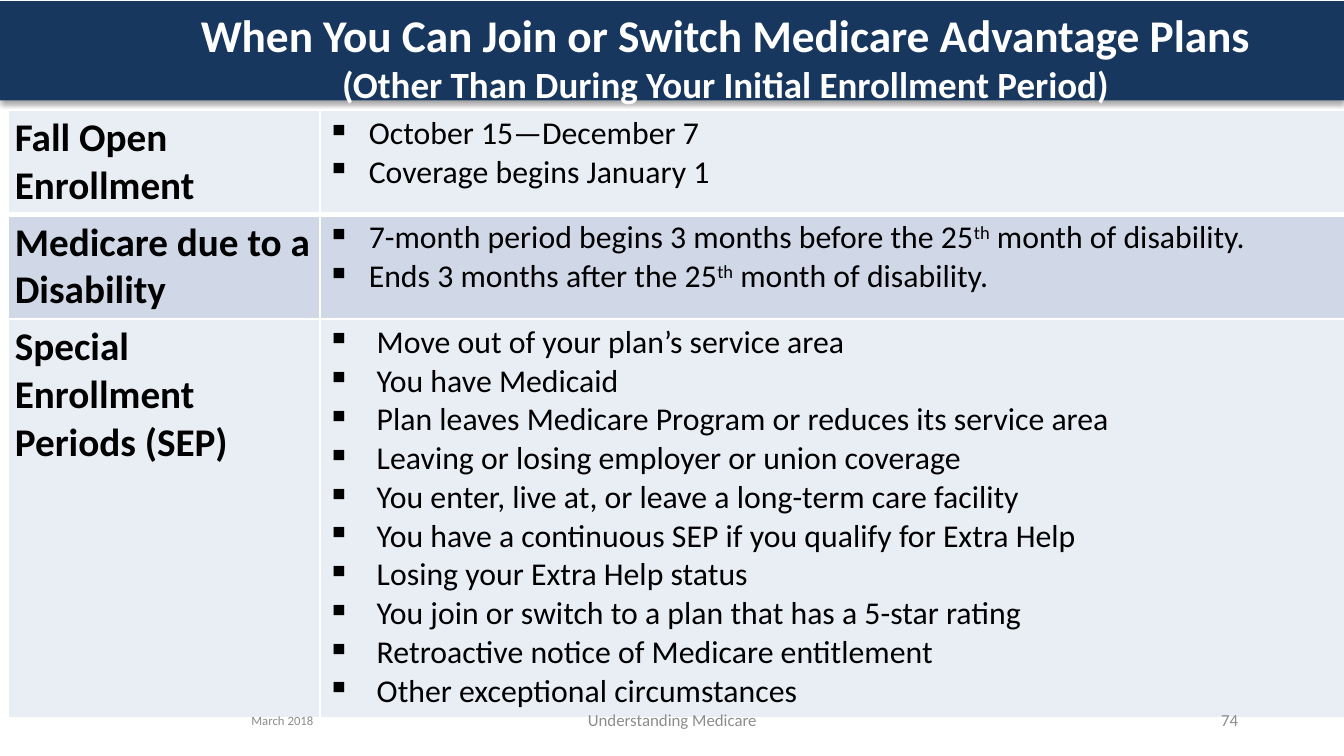
from collections import namedtuple

from lxml import etree
from pptx import Presentation
from pptx import util as u
from pptx.dml.color import RGBColor
from pptx.enum import shapes, text
from pptx.oxml import ns

FONT = "Calibri"
NAVY, WHITE, BLACK, GREY = "17375E", "FFFFFF", "000000", "8C8C8C"
ROW_FILLS = ("E9EDF4", "D0D8E8")
COLUMN_SHARES = (5.9, 19.36)

Box = namedtuple("Box", "left top width height")
Period = namedtuple("Period", "name height indent items")

TITLE_LINES = (
    ("When You Can Join or Switch Medicare Advantage Plans", 24.3),
    ("(Other Than During Your Initial Enrollment Period)", 19.8),
)

# Text between carets is superscript.
PERIODS = (
    Period("Fall Open Enrollment", 1.96, 0.79, (
        "October 15—December 7",
        "Coverage begins January 1",
    )),
    Period("Medicare due to a Disability", 1.96, 0.79, (
        "7-month period begins 3 months before the 25^th^ month of disability.",
        "Ends 3 months after the 25^th^ month of disability.",
    )),
    Period("Special Enrollment Periods (SEP)", 7.54, 0.94, (
        "Move out of your plan’s service area",
        "You have Medicaid",
        "Plan leaves Medicare Program or reduces its service area",
        "Leaving or losing employer or union coverage",
        "You enter, live at, or leave a long-term care facility",
        "You have a continuous SEP if you qualify for Extra Help",
        "Losing your Extra Help status",
        "You join or switch to a plan that has a 5-star rating",
        "Retroactive notice of Medicare entitlement",
        "Other exceptional circumstances",
    )),
)


def color(value):
    return RGBColor.from_string(value)


def add_xml(parent, tag, **attributes):
    element = etree.SubElement(parent, ns.qn(tag))
    for name, value in attributes.items():
        element.set(name, str(value))
    return element


def format_font(font, size, value, bold=False):
    font.name, font.size, font.bold = FONT, u.Pt(size), bold
    font.color.rgb = color(value)


def add_shadow(shape):
    effects = add_xml(shape.element.spPr, "a:effectLst")
    shadow = add_xml(effects, "a:outerShdw", blurRad=u.Pt(3.1), dist=u.Pt(1.8),
                     dir=90 * 60000, rotWithShape=0)
    add_xml(add_xml(shadow, "a:srgbClr", val=BLACK), "a:alpha", val=35000)


def add_header(slide, box):
    band = slide.shapes.add_shape(
        shapes.MSO_SHAPE.RECTANGLE, u.Cm(box.left), u.Cm(box.top), u.Cm(box.width), u.Cm(box.height))
    band.fill.solid()
    band.fill.fore_color.rgb = color(NAVY)
    band.line.fill.background()
    add_shadow(band)

    title = slide.shapes.title
    title.element.addprevious(band.element)
    title.left, title.top = u.Cm(box.left + 3.18), u.Cm(box.top)
    title.width, title.height = u.Cm(21.06), u.Cm(box.height + 0.2)
    frame = title.text_frame
    frame.auto_size = text.MSO_AUTO_SIZE.NONE
    frame.vertical_anchor = text.MSO_ANCHOR.MIDDLE
    frame.text = "\n".join(line for line, _ in TITLE_LINES)
    for paragraph, (_, size) in zip(frame.paragraphs, TITLE_LINES):
        paragraph.alignment = text.PP_ALIGN.CENTER
        format_font(paragraph.runs[0].font, size, WHITE, bold=True)


def format_cell(cell, fill, top=1, bottom=1):
    cell.margin_left = cell.margin_right = u.Cm(0.13)
    cell.margin_top = cell.margin_bottom = u.Cm(0.08)
    properties = cell._tc.get_or_add_tcPr()
    for side, width in (("L", 1), ("R", 1), ("T", top), ("B", bottom)):
        border = add_xml(properties, "a:ln" + side, w=u.Pt(width))
        add_xml(add_xml(border, "a:solidFill"), "a:srgbClr", val=WHITE)
    cell.fill.solid()
    cell.fill.fore_color.rgb = color(fill)


def fill_bullets(frame, items, indent):
    for index, item in enumerate(items):
        paragraph = frame.paragraphs[0] if index == 0 else frame.add_paragraph()
        properties = paragraph._p.get_or_add_pPr()
        properties.set("marL", str(u.Cm(indent)))
        properties.set("indent", str(-u.Cm(indent)))
        add_xml(properties, "a:buChar", char="▪")
        for part, words in enumerate(item.split("^")):
            run = paragraph.add_run()
            run.text = words
            format_font(run.font, 17, BLACK)
            if part % 2:
                run._r.get_or_add_rPr().set("baseline", "30000")


def add_period_table(slide, box):
    frame = slide.shapes.add_table(
        len(PERIODS), 2, u.Cm(box.left), u.Cm(box.top), u.Cm(box.width), u.Cm(box.height))
    table = frame.table
    table.first_row = table.horz_banding = False
    for column, share in zip(table.columns, COLUMN_SHARES):
        column.width = u.Cm(box.width * share / sum(COLUMN_SHARES))
    for index, period in enumerate(PERIODS):
        row = table.rows[index]
        row.height = u.Cm(period.height)
        for cell in row.cells:
            format_cell(cell, ROW_FILLS[index % 2],
                        top=3 if index == 1 else 1, bottom=3 if index == 0 else 1)
        label, details = row.cells
        label.text_frame.text = period.name
        format_font(label.text_frame.paragraphs[0].runs[0].font, 21, BLACK, bold=True)
        fill_bullets(details.text_frame, period.items, period.indent)


def add_footer(slide, box):
    align = text.PP_ALIGN
    for words, offset, width, size, alignment in (
        ("March 2018", 0, 4.29, 6.8, align.LEFT),
        ("Understanding Medicare", 3.91, 8.59, 9, align.CENTER),
        ("74", 13.43, 5.72, 9, align.RIGHT),
    ):
        shape = slide.shapes.add_textbox(
            u.Cm(box.left + offset), u.Cm(box.top), u.Cm(width), u.Cm(box.height))
        frame = shape.text_frame
        frame.word_wrap = True
        frame.vertical_anchor = text.MSO_ANCHOR.MIDDLE
        frame.text = words
        paragraph = frame.paragraphs[0]
        paragraph.alignment = alignment
        format_font(paragraph.runs[0].font, size, GREY)


def main():
    presentation = Presentation()
    presentation.slide_width, presentation.slide_height = u.Cm(25.4), u.Cm(14.29)
    slide = presentation.slides.add_slide(presentation.slide_layouts[5])
    add_header(slide, Box(0, 0.02, 25.4, 1.88))
    add_period_table(slide, Box(0.15, 2.08, sum(COLUMN_SHARES), 11.46))
    add_footer(slide, Box(4.5, 13.23, 19.15, 0.76))
    presentation.save("out.pptx")


if __name__ == "__main__":
    main()
